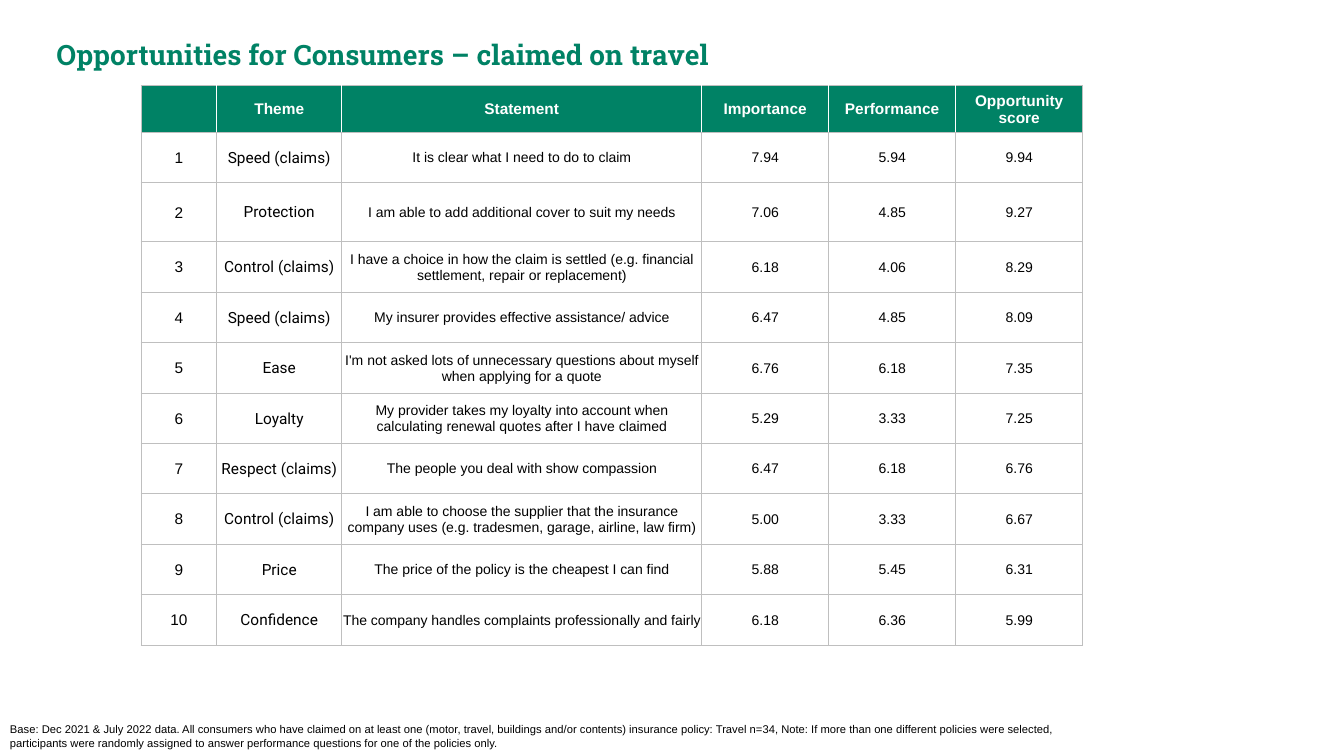
from lxml import etree
from pptx import Presentation
from pptx import util as u
from pptx.dml.color import RGBColor
from pptx.enum import text
from pptx.oxml import ns

GREEN, GREY, WHITE, BLACK = "008265", "BFBFBF", "FFFFFF", "000000"
WIDTHS = [0.75, 1.24, 3.57, 1.26, 1.26, 1.26]
HEADS = ["", "Theme", "Statement", "Importance", "Performance",
         "Opportunity score"]
ROWS = [
    ("Speed (claims)", "It is clear what I need to do to claim",
     "7.94", "5.94", "9.94"),
    ("Protection", "I am able to add additional cover to suit my needs",
     "7.06", "4.85", "9.27"),
    ("Control (claims)", "I have a choice in how the claim is settled "
     "(e.g. financial settlement, repair or replacement)",
     "6.18", "4.06", "8.29"),
    ("Speed (claims)", "My insurer provides effective assistance/ advice",
     "6.47", "4.85", "8.09"),
    ("Ease", "I'm not asked lots of unnecessary questions about myself "
     "when applying for a quote", "6.76", "6.18", "7.35"),
    ("Loyalty", "My provider takes my loyalty into account when "
     "calculating renewal quotes after I have claimed",
     "5.29", "3.33", "7.25"),
    ("Respect (claims)", "The people you deal with show compassion",
     "6.47", "6.18", "6.76"),
    ("Control (claims)", "I am able to choose the supplier that the "
     "insurance company uses (e.g. tradesmen, garage, airline, law firm)",
     "5.00", "3.33", "6.67"),
    ("Price", "The price of the policy is the cheapest I can find",
     "5.88", "5.45", "6.31"),
    ("Confidence", "The company handles complaints professionally and fairly",
     "6.18", "6.36", "5.99"),
]
BASE = ("Base: Dec 2021 & July 2022 data. All consumers who have claimed on "
        "at least one (motor, travel, buildings and/or contents) insurance "
        "policy: Travel n=34, Note: If more than one different policies were "
        "selected, participants were randomly assigned to answer performance "
        "questions for one of the policies only.")


def paint(color, value):
    color.rgb = RGBColor.from_string(value)


def write(par, words, size, face, color, bold=False):
    run = par.add_run()
    run.text = words
    font = run.font
    font.size, font.name, font.bold = u.Pt(size), face, bold
    paint(font.color, color)


def place(shape, left, top, width, height):
    shape.left, shape.top = u.Inches(left), u.Inches(top)
    shape.width, shape.height = u.Inches(width), u.Inches(height)


def edge(cell, side, color, points):
    """Draw one cell border; side is L, R, T or B."""
    line = etree.SubElement(cell._tc.get_or_add_tcPr(), ns.qn("a:ln" + side),
                            w=str(u.Pt(points)))
    fill = etree.SubElement(line, ns.qn("a:solidFill"))
    etree.SubElement(fill, ns.qn("a:srgbClr"), val=color)


def frame(cell, head, first, last):
    """Grey borders, with white dividers between header cells."""
    inner, outer = (WHITE, 1), (GREY, 0.75)
    edge(cell, "L", *(inner if head and not first else outer))
    edge(cell, "R", *(inner if head and not last else outer))
    for side in "TB":
        edge(cell, side, *outer)


def fill_cell(cell, words, row, col):
    head = row == 0
    frame(cell, head, col == 0, col == len(WIDTHS) - 1)
    if head:
        cell.fill.solid()
        paint(cell.fill.fore_color, GREEN)
    else:
        cell.fill.background()
    cell.vertical_anchor = text.MSO_ANCHOR.MIDDLE
    if not head or col > 1:
        cell.margin_left = cell.margin_right = u.Inches(0.01)
        cell.margin_top, cell.margin_bottom = u.Inches(0.01), 0
    par = cell.text_frame.paragraphs[0]
    par.alignment = text.PP_ALIGN.CENTER
    if words:
        size = 11 if head or col < 2 else 10
        face = "Roboto" if col == 1 and not head else "Arial"
        write(par, words, size, face, WHITE if head else BLACK, head)


def add_title(slide):
    title = slide.shapes.title
    place(title, 0.46, 0.32, 12.28, 0.44)
    body = title.text_frame
    body.auto_size = text.MSO_AUTO_SIZE.SHAPE_TO_FIT_TEXT
    body.vertical_anchor = text.MSO_ANCHOR.MIDDLE
    par = body.paragraphs[0]
    par.alignment = text.PP_ALIGN.LEFT
    write(par, "Opportunities for Consumers – claimed on travel",
          20, "Roboto Slab", GREEN, True)


def add_scores(slide):
    data = [HEADS] + [(str(rank), *row) for rank, row in enumerate(ROWS, 1)]
    high = [0.46, 0.5, 0.59] + [0.5] * 8
    table = slide.shapes.add_table(
        len(data), len(WIDTHS), u.Inches(1.4), u.Inches(0.85),
        u.Inches(sum(WIDTHS)), u.Inches(sum(high))).table
    table.horz_banding = False
    for col, width in zip(table.columns, WIDTHS):
        col.width = u.Inches(width)
    for row, height in zip(table.rows, high):
        row.height = u.Inches(height)
    for r, row in enumerate(data):
        for c, words in enumerate(row):
            fill_cell(table.cell(r, c), words, r, c)


def add_base(slide):
    box = slide.shapes.add_textbox(0, u.Inches(7.12), u.Inches(10.89),
                                   u.Inches(0.38))
    box.text_frame.word_wrap = True
    write(box.text_frame.paragraphs[0], BASE, 8, "Arial", BLACK)


def main():
    deck = Presentation()
    deck.slide_width, deck.slide_height = u.Inches(13.33), u.Inches(7.5)
    slide = deck.slides.add_slide(deck.slide_layouts[5])
    add_title(slide)
    add_scores(slide)
    add_base(slide)
    deck.save("out.pptx")


if __name__ == "__main__":
    main()
